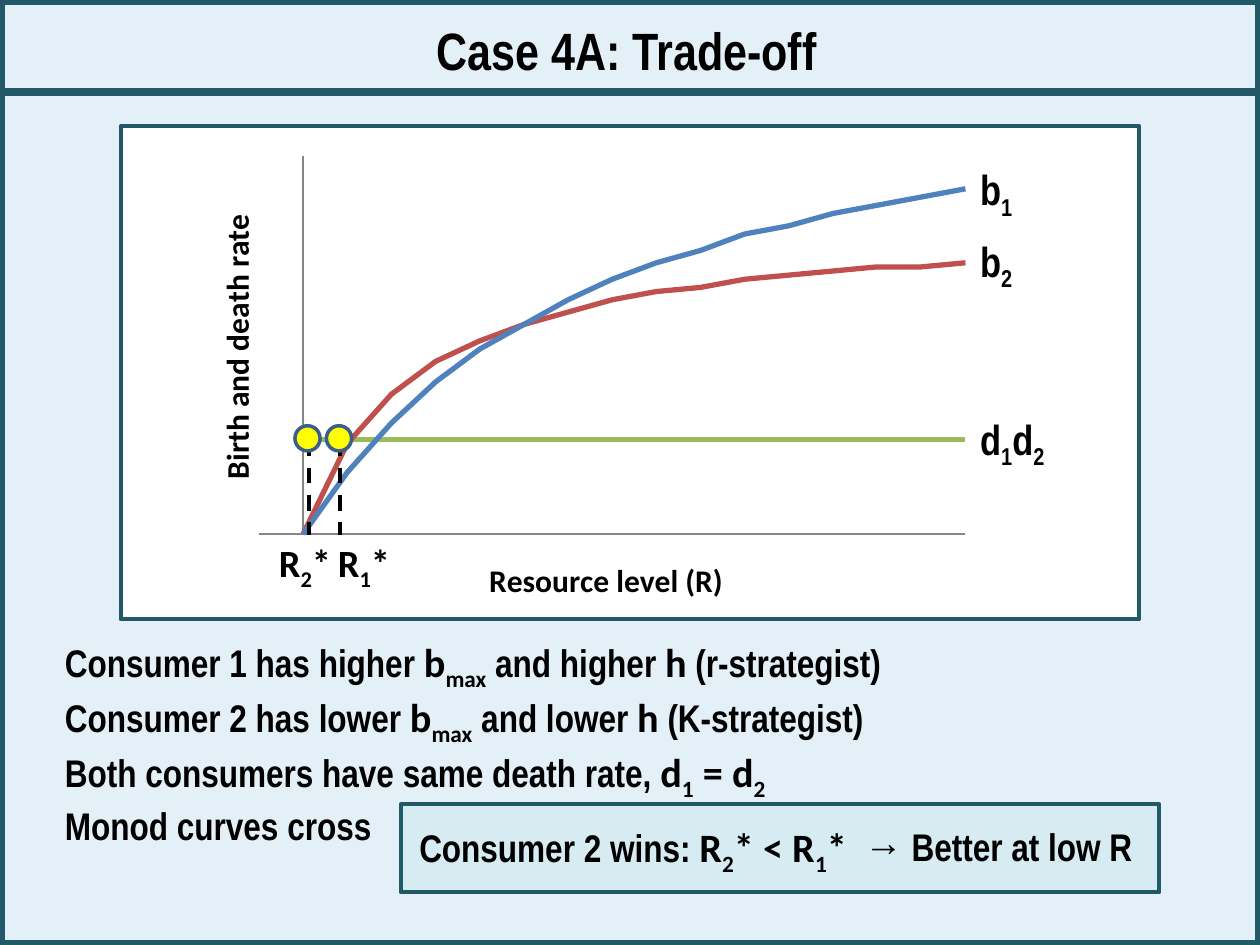
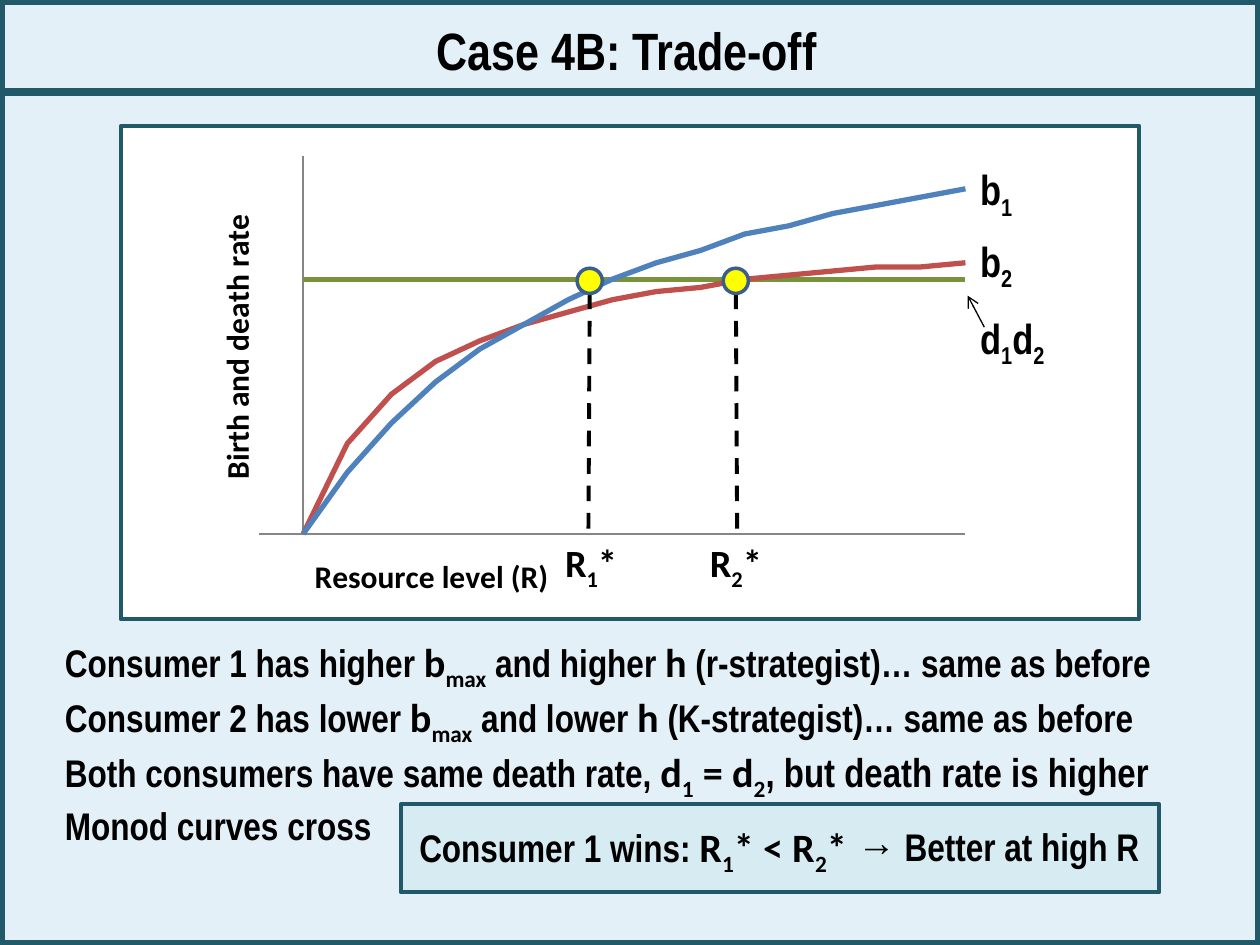
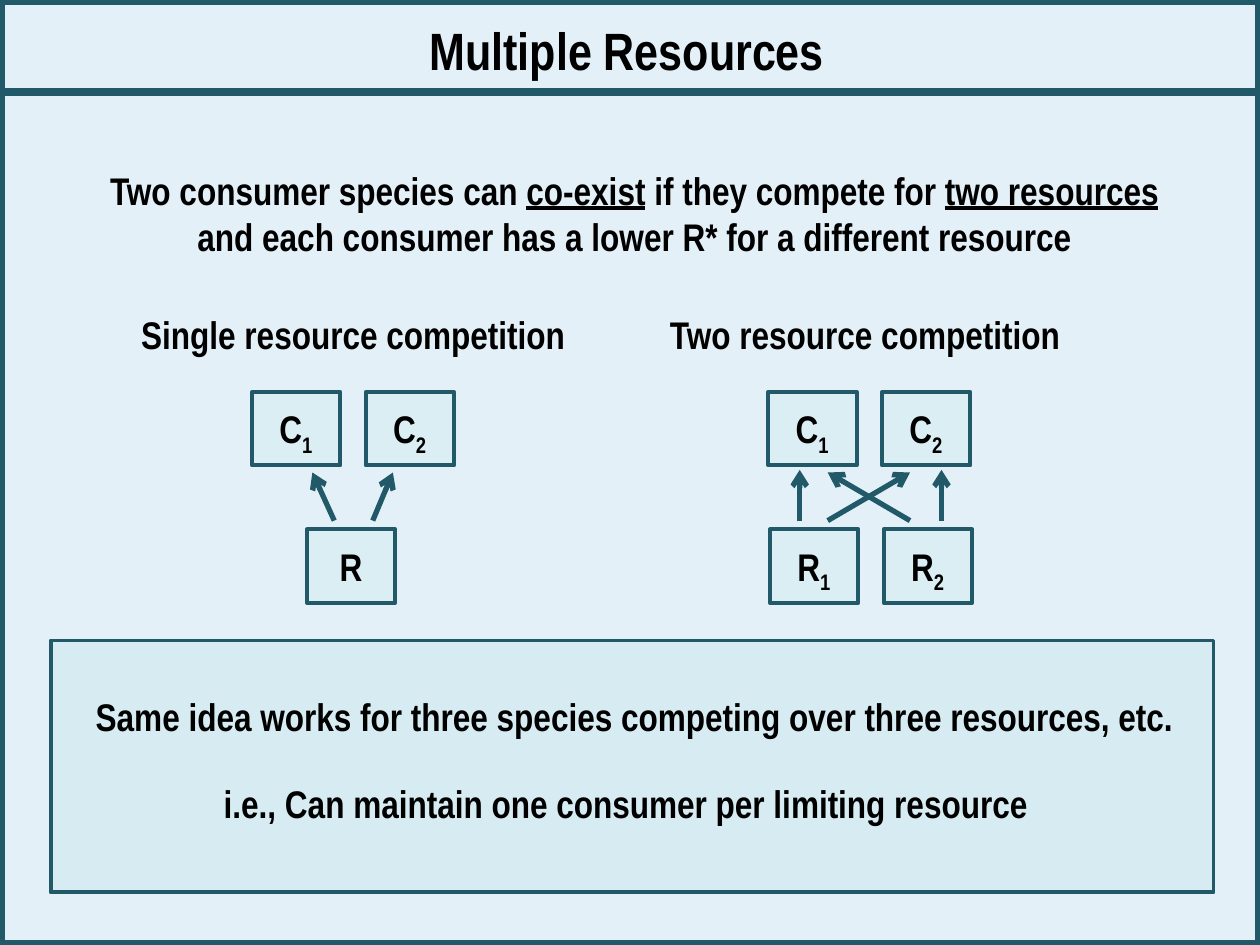
import dataclasses

import pptx
import pptx.chart.data
import pptx.dml.color
import pptx.enum.chart
import pptx.enum.dml
import pptx.enum.shapes
import pptx.enum.text
import pptx.oxml
import pptx.oxml.ns
import pptx.util

Pt = pptx.util.Pt
qn = pptx.oxml.ns.qn


@dataclasses.dataclass(frozen=True)
class Theme:
    background: str = "E4F0F8"
    teal: str = "215968"
    panel: str = "FFFFFF"
    callout: str = "D6EBF2"
    node: str = "DBEEF4"
    ink: str = "000000"
    axis: str = "868686"
    dot: str = "FFFF00"
    dot_line: str = "3A5F8C"
    curve_1: str = "4F81BD"
    curve_2: str = "C0504D"
    narrow: str = "Arial Narrow"
    plain: str = "Calibri"
    title_size: int = 30
    label_size: int = 24
    math_size: int = 23
    body_size: int = 22
    axis_size: int = 18
    chart_size: int = 10


THEME = Theme()

# ---- content: a paragraph is a list of runs, a run is text or (text, format)

SUB = {"baseline": -25}
MATH = {"font": THEME.plain, "size": THEME.math_size}
MATH_SUB = MATH | SUB
UNDERLINE = {"underline": True}


def consumer_line(number, level, strategist, ending):
    return [f"Consumer {number} has {level} ", ("b", MATH), ("max", MATH_SUB),
            f" and {level} ", ("h", MATH), f" ({strategist}-strategist){ending}"]


def observations(same_ending, death_ending):
    return [
        consumer_line(1, "higher", "r", same_ending),
        consumer_line(2, "lower", "K", same_ending),
        ["Both consumers have same death rate, ", ("d", MATH), ("1", MATH_SUB),
         (" = d", MATH), ("2", MATH_SUB), *death_ending],
        ["Monod curves cross"],
    ]


MONOD_CURVES = [  # name, b max, half-saturation h, colour
    ("Series 1", 123.3, 7, THEME.curve_1),
    ("Series 2", 77.1, 2.5, THEME.curve_2),
]
RESOURCE_LEVELS = range(31)

CASES = [
    {
        "title": "Case 4A: Trade-off",
        "observations": observations("", []),
        "death_rate": 23, "death_color": "9BBB59", "death_label_top": 232.5,
        "x_title_at": (0.38, 0.88),
        "dot_center_y": 250.5, "drop": (251.5, 305.5),
        # index, label left, dot centre x, foot of the drop line x
        "equilibria": [("1", 177, 193.75, 194.4), ("2", 143.25, 175.75, 176.4)],
        "winner": ("2", "1"), "reason": "→ Better at low R",
    },
    {
        "title": "Case 4B: Trade-off",
        "observations": observations(
            "… same as before",
            [(", but death rate is higher", {"size": THEME.math_size})]),
        "death_rate": 62, "death_color": "77933C", "death_label_top": 175,
        "x_title_at": (0.17, 0.87),
        "dot_center_y": 160.5, "drop": (167.75, 304),
        "equilibria": [("1", 306.75, 337, 336.25), ("2", 389.5, 420.5, 421.25)],
        "winner": ("1", "2"), "reason": "→ Better at high R",
        "death_pointer": ((562.5, 187), (553, 169)),
    },
]

COEXISTENCE = [
    ["Two consumer species can ", ("co-exist", UNDERLINE), " if they compete for ",
     ("two resources", UNDERLINE)],
    ["and each consumer has a lower R* for a different resource"],
]
CONCLUSIONS = [  # text, box
    ("Same idea works for three species competing over three resources, etc.",
     (30, 392.5, 665, 34)),
    ("i.e., Can maintain one consumer per limiting resource", (94.5, 442, 526, 34)),
]
CONSUMER_TOP, RESOURCE_TOP = 224, 302.5
ARROW_START, SLANTED_END, STRAIGHT_END = 297.5, 270, 268.5
FOOD_WEBS = [  # nodes: letter, index, left, top; arrows: x from, x to
    {
        "heading": "Single resource competition", "heading_left": 55.5,
        "nodes": [("C", "1", 144, CONSUMER_TOP), ("C", "2", 209, CONSUMER_TOP),
                  ("R", "", 175.5, RESOURCE_TOP)],
        "arrows": [(191, 178.5), (213, 224.5)],
    },
    {
        "heading": "Two resource competition", "heading_left": 348,
        "nodes": [("C", "1", 439, CONSUMER_TOP), ("C", "2", 504, CONSUMER_TOP),
                  ("R", "1", 440, RESOURCE_TOP), ("R", "2", 505, RESOURCE_TOP)],
        "arrows": [(520, 473), (473, 520), (457, 457), (538, 538)],
    },
]

# ---- drawing helpers


def rgb(color):
    return pptx.dml.color.RGBColor.from_string(color)


def write_runs(paragraph, runs, **defaults):
    for item in runs:
        text, changes = (item, {}) if isinstance(item, str) else item
        style = defaults | changes
        run = paragraph.add_run()
        run.text = text
        run.font.name = style["font"]
        run.font.size = Pt(style["size"])
        run.font.bold = True
        run.font.color.rgb = rgb(THEME.ink)
        if style.get("underline"):
            run.font.underline = True
        if "baseline" in style:
            run.font._element.set("baseline", str(style["baseline"] * 1000))


def add_text(shapes, box, paragraphs, font=THEME.narrow, size=THEME.body_size,
             centered=False):
    frame = shapes.add_textbox(*map(Pt, box)).text_frame
    frame.word_wrap = True
    for index, runs in enumerate(paragraphs):
        paragraph = frame.add_paragraph() if index else frame.paragraphs[0]
        if centered:
            paragraph.alignment = pptx.enum.text.PP_ALIGN.CENTER
        write_runs(paragraph, runs, font=font, size=size)


def add_figure(shapes, box, fill=None, line=THEME.teal, width=2.25, kind="RECTANGLE"):
    shape = shapes.add_shape(pptx.enum.shapes.MSO_SHAPE[kind], *map(Pt, box))
    shape.shadow.inherit = False
    if fill:
        shape.fill.solid()
        shape.fill.fore_color.rgb = rgb(fill)
    else:
        shape.fill.background()
    shape.line.color.rgb = rgb(line)
    shape.line.width = Pt(width)


def add_line(shapes, start, end, color, width, dashed=False, arrow=False):
    connector = shapes.add_connector(
        pptx.enum.shapes.MSO_CONNECTOR.STRAIGHT, *map(Pt, (*start, *end)))
    connector.line.color.rgb = rgb(color)
    connector.line.width = Pt(width)
    if dashed:
        connector.line.dash_style = pptx.enum.dml.MSO_LINE.DASH
    properties = connector._element.spPr
    if arrow:
        tip = pptx.oxml.parse_xml(
            f'<a:tailEnd {pptx.oxml.ns.nsdecls("a")} type="arrow"/>')
        properties.find(qn("a:ln")).append(tip)
    properties.append(pptx.oxml.parse_xml(
        f'<a:effectLst {pptx.oxml.ns.nsdecls("a")}/>'))


def set_layout(parent, index, target="", **fractions):
    """Place a chart part by fractions of the chart's size."""
    for old in parent.findall(qn("c:layout")):
        parent.remove(old)
    inner = f'<c:layoutTarget val="{target}"/>' if target else ""
    values = "".join(f'<c:{key} val="{value}"/>' for key, value in fractions.items())
    parent.insert(index, pptx.oxml.parse_xml(
        f'<c:layout {pptx.oxml.ns.nsdecls("c")}><c:manualLayout>{inner}'
        f'<c:xMode val="edge"/><c:yMode val="edge"/>{values}'
        '</c:manualLayout></c:layout>'))


def style_axis(axis, title, low, high, at):
    axis.minimum_scale, axis.maximum_scale = low, high
    axis.has_major_gridlines = False
    axis.major_tick_mark = axis.minor_tick_mark = pptx.enum.chart.XL_TICK_MARK.NONE
    axis.tick_label_position = pptx.enum.chart.XL_TICK_LABEL_POSITION.NONE
    axis.format.line.color.rgb = rgb(THEME.axis)
    axis.format.line.width = Pt(0.75)
    write_runs(axis.axis_title.text_frame.paragraphs[0], [title],
               font=THEME.plain, size=THEME.axis_size)
    set_layout(axis.axis_title._element, 1, x=at[0], y=at[1])


def add_rate_chart(slide, case):
    data = pptx.chart.data.XyChartData()
    for name, maximum, half, _ in MONOD_CURVES:
        series = data.add_series(name)
        for level in RESOURCE_LEVELS:
            series.add_data_point(level, round(maximum * level / (half + level)))
    deaths = data.add_series("Series 3")
    for level in RESOURCE_LEVELS:
        deaths.add_data_point(level, case["death_rate"])

    chart = slide.shapes.add_chart(
        pptx.enum.chart.XL_CHART_TYPE.XY_SCATTER_SMOOTH_NO_MARKERS,
        *map(Pt, (95.75, 75.5, 475, 273.5)), data).chart
    chart.has_legend = chart.has_title = False
    chart.font.name = THEME.plain
    chart.font.size = Pt(THEME.chart_size)
    chart.font.color.rgb = rgb(THEME.ink)
    colors = [curve[-1] for curve in MONOD_CURVES] + [case["death_color"]]
    chart.plots[0].vary_by_categories = False
    for series, color in zip(chart.plots[0].series, colors):
        series.smooth = True
        series.marker.style = pptx.enum.chart.XL_MARKER_STYLE.NONE
        series.format.line.color.rgb = rgb(color)
        series.format.line.width = Pt(3)
    style_axis(chart.category_axis, "Resource level (R)", -1, 15, case["x_title_at"])
    style_axis(chart.value_axis, "Birth and death rate", 0, 92, (0.05, 0.16))
    rotation = chart.value_axis.axis_title.text_frame._txBody.bodyPr
    rotation.set("rot", "-5400000")
    rotation.set("vert", "horz")
    set_layout(chart._chartSpace.chart.plotArea, 0, "inner",
               x=0.11, y=0.05, w=0.85, h=0.79)


def add_equilibrium(slide, case, index, label_left, dot_x, foot_x):
    shapes = slide.shapes.add_group_shape().shapes
    top, bottom = case["drop"]
    add_text(shapes, (label_left, 304.5, 62, 35), [["R", (index, SUB), "*"]],
             font=THEME.plain, centered=True)
    head_x = foot_x if top < case["dot_center_y"] + 5 else dot_x
    add_line(shapes, (head_x, top), (foot_x, bottom), THEME.ink, 2.25, dashed=True)
    radius = 7.2
    add_figure(shapes, (dot_x - radius, case["dot_center_y"] - radius,
                        2 * radius, 2 * radius),
               THEME.dot, THEME.dot_line, 2, "OVAL")


def new_slide(presentation, title):
    slide = presentation.slides.add_slide(presentation.slide_layouts[6])
    add_figure(slide.shapes, (0, 0, 720, 540), width=6)
    add_line(slide.shapes, (0.5, 52.5), (720, 52.5), THEME.teal, 5)
    add_text(slide.shapes, (53.25, 7, 610, 44), [[title]],
             size=THEME.title_size, centered=True)
    return slide


def build_case(presentation, case):
    slide = new_slide(presentation, case["title"])
    shapes = slide.shapes
    add_text(shapes, (30, 360.75, 677, 117), case["observations"])
    add_figure(shapes, (69, 72, 582, 282), THEME.panel)
    add_rate_chart(slide, case)
    for top, runs in [(90, ["b", ("1", SUB)]), (131, ["b", ("2", SUB)]),
                      (case["death_label_top"], ["d", ("1", SUB), "d", ("2", SUB)])]:
        add_text(shapes, (553, top, 58, 36), [runs], size=THEME.label_size)
    if "death_pointer" in case:
        add_line(shapes, *case["death_pointer"], THEME.ink, 0.75, arrow=True)
    add_figure(shapes, (229, 459.5, 433.5, 50.5), THEME.callout)
    winner, loser = case["winner"]
    add_text(shapes, (232.5, 466.5, 270, 35),
             [[f"Consumer {winner} wins: ", ("R", MATH), (winner, MATH_SUB),
               ("* < R", MATH), (loser, MATH_SUB), ("*", MATH)]])
    for equilibrium in case["equilibria"]:
        add_equilibrium(slide, case, *equilibrium)
    add_text(shapes, (477.5, 466.5, 186, 35), [[case["reason"]]], centered=True)


def add_food_web(slide, web):
    shapes = slide.shapes.add_group_shape().shapes
    for letter, index, left, top in web["nodes"]:
        add_figure(shapes, (left, top, 50.5, 42), THEME.node)
        runs = [letter, (index, SUB)] if index else [letter]
        add_text(shapes, (left - 2, top + 4, 54, 34), [runs], centered=True)
    for start_x, end_x in web["arrows"]:
        end_y = STRAIGHT_END if start_x == end_x else SLANTED_END
        add_line(shapes, (start_x, ARROW_START), (end_x, end_y), THEME.teal, 3,
                 arrow=True)
    add_text(slide.shapes, (web["heading_left"], 174, 292.5, 34), [[web["heading"]]],
             centered=True)


def build_resources(presentation):
    slide = new_slide(presentation, "Multiple Resources")
    add_figure(slide.shapes, (29, 366, 664.5, 144), THEME.callout)
    add_text(slide.shapes, (30, 92, 665, 60.5), COEXISTENCE, centered=True)
    for web in FOOD_WEBS:
        add_food_web(slide, web)
    for text, box in CONCLUSIONS:
        add_text(slide.shapes, box, [[text]], centered=True)


def main():
    presentation = pptx.Presentation()
    presentation.slide_width, presentation.slide_height = Pt(720), Pt(540)
    background = presentation.slide_master.background.fill
    background.solid()
    background.fore_color.rgb = rgb(THEME.background)
    for case in CASES:
        build_case(presentation, case)
    build_resources(presentation)
    presentation.save("out.pptx")


if __name__ == "__main__":
    main()
